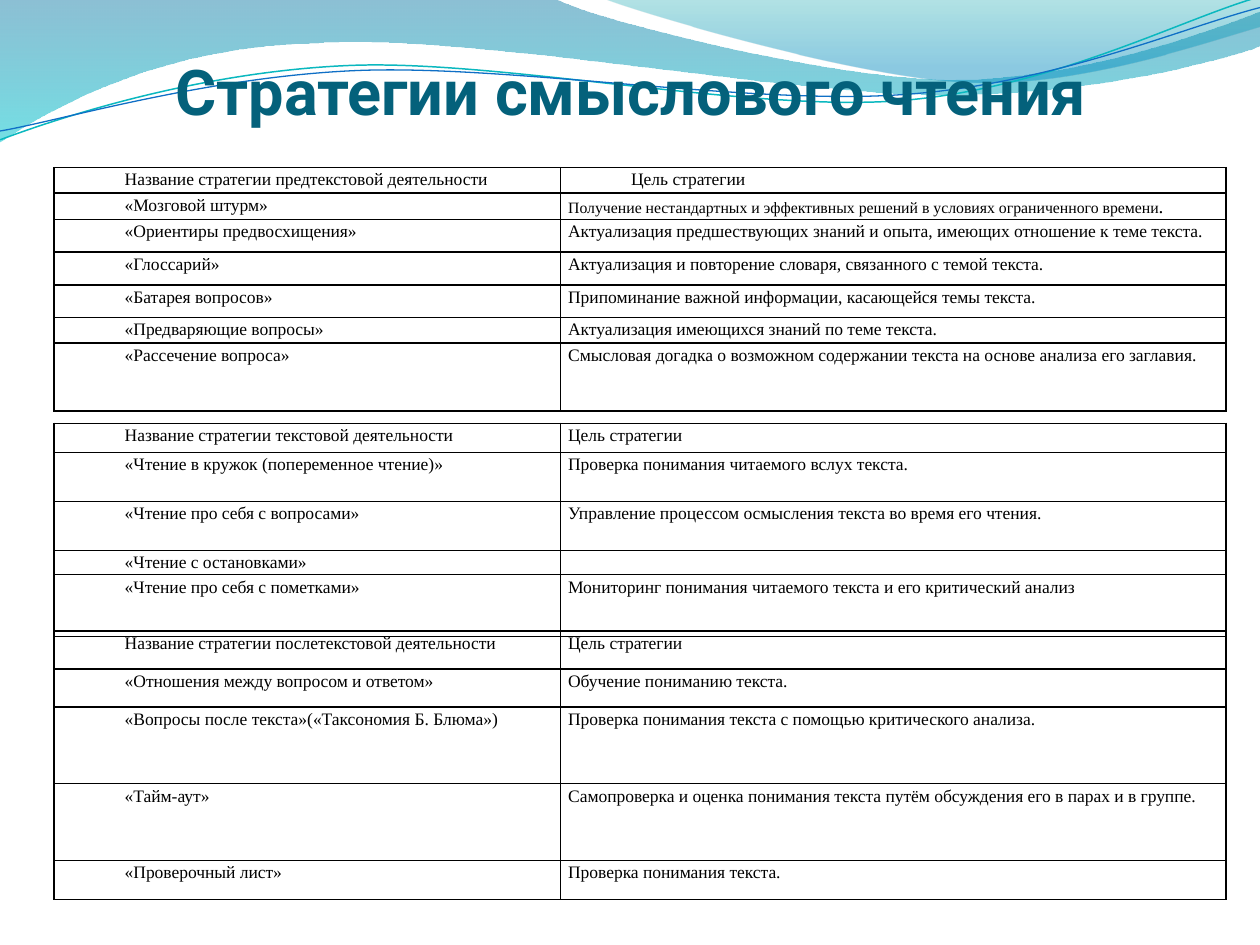
from dataclasses import dataclass
from math import cos, radians, sin
from typing import Optional

from lxml import etree
from pptx import Presentation
from pptx.dml.color import RGBColor
from pptx.enum.text import MSO_ANCHOR, PP_ALIGN
from pptx.oxml.ns import qn
from pptx.util import Inches, Pt

CENTER, JUSTIFY, LEFT = PP_ALIGN.CENTER, PP_ALIGN.JUSTIFY, PP_ALIGN.LEFT
BOTTOM = MSO_ANCHOR.BOTTOM

BLACK = RGBColor(0x00, 0x00, 0x00)
TITLE_TEAL = RGBColor(0x04, 0x61, 0x7B)
DEEP_BLUE = RGBColor(0x00, 0x74, 0xA1)
CYAN = RGBColor(0x00, 0xC6, 0xCF)
TEAL = RGBColor(0x00, 0xA1, 0xA9)
SKY = RGBColor(0x00, 0x8B, 0xBF)
LINE_TEAL = RGBColor(0x0A, 0xB8, 0xBF)
LINE_BLUE = RGBColor(0x0F, 0x6F, 0xC6)

BODY_FONT = "Times New Roman"
TABLE_LEFT, COL_WIDTHS = 0.43, (4.02, 5.28)
LINE_TILT = 357.3
LINE_CENTER = (4.99, 0.58)


@dataclass
class Stop:
    position: float
    color: RGBColor
    opacity: int


@dataclass
class Wave:
    """Steps of two numbers are straight lines, steps of six are cubic curves."""
    start: tuple[float, float]
    steps: list[tuple[float, ...]]
    stops: tuple[Stop, ...] = ()
    line_color: Optional[RGBColor] = None
    line_width: float = 0
    rotation: float = 0


@dataclass
class Row:
    height: float
    name: str
    goal: str


@dataclass
class StrategyTable:
    top: float
    rows: list[Row]
    indent_goal_header: bool = False


WAVES = [
    Wave((0, 0), [
        (4.4, -0.01), (4.76, 0.17, 6.64, 0.63, 7.58, 0.63),
        (8.53, 0.63, 9.58, 0.26, 10, 0.09), (10.01, 0.36),
        (9.83, 0.44, 8.7, 0.76, 7.46, 0.75), (6.22, 0.75, 3.82, 0.28, 2.57, 0.34),
        (1.29, 0.36, 0.46, 0.83, -0.01, 1.13), (0, 0)],
        stops=(Stop(0, DEEP_BLUE, 45), Stop(1, CYAN, 55))),
    Wave((4.79, -0.01), [
        (5.09, 0.11, 6.82, 0.62, 7.69, 0.65), (8.56, 0.69, 9.61, 0.32, 10, 0.21),
        (10, 0), (4.79, -0.01)],
        stops=(Stop(0, TEAL, 30), Stop(0.8, SKY, 45))),
    Wave((0, 1.11), [
        (0.48, 0.93, 1.58, 0.57, 2.77, 0.52), (3.95, 0.47, 5.93, 0.89, 7.13, 0.8),
        (8.33, 0.71, 9.38, 0.15, 9.98, -0.02)],
        line_color=LINE_TEAL, line_width=0.85, rotation=LINE_TILT),
    Wave((0, 1.04), [
        (0.47, 0.96, 1.64, 0.61, 2.83, 0.56), (4.03, 0.51, 5.97, 0.84, 7.17, 0.75),
        (8.36, 0.67, 9.41, 0.21, 10, 0.06)],
        line_color=LINE_BLUE, line_width=0.75, rotation=LINE_TILT),
]

SMALL_GOAL = "Получение нестандартных и эффективных решений в условиях ограниченного времени."

TABLES = [
    StrategyTable(1.33, [
        Row(0.2, "Название стратегии предтекстовой деятельности", "Цель стратегии"),
        Row(0.21, "«Мозговой штурм»", SMALL_GOAL),
        Row(0.26, "«Ориентиры предвосхищения»",
            "Актуализация предшествующих знаний и опыта, имеющих отношение к теме текста."),
        Row(0.26, "«Глоссарий»", "Актуализация и повторение словаря, связанного с темой текста."),
        Row(0.26, "«Батарея вопросов»", "Припоминание важной информации, касающейся темы текста."),
        Row(0.2, "«Предваряющие вопросы»", "Актуализация имеющихся знаний по теме текста."),
        Row(0.54, "«Рассечение вопроса»",
            "Смысловая догадка о возможном содержании текста на основе анализа его заглавия."),
    ], indent_goal_header=True),
    StrategyTable(3.36, [
        Row(0.23, "Название стратегии текстовой деятельности", "Цель стратегии"),
        Row(0.39, "«Чтение в кружок (попеременное чтение)»",
            "Проверка понимания читаемого вслух текста."),
        Row(0.39, "«Чтение про себя с вопросами»",
            "Управление процессом осмысления текста во время его чтения."),
        Row(0.19, "«Чтение с остановками»", ""),
        Row(0.49, "«Чтение про себя с пометками»",
            "Мониторинг понимания читаемого текста и его критический анализ"),
    ]),
    StrategyTable(5.01, [
        Row(0.3, "Название стратегии послетекстовой деятельности", "Цель стратегии"),
        Row(0.3, "«Отношения между вопросом и ответом»", "Обучение пониманию текста."),
        Row(0.61, "«Вопросы после текста»(«Таксономия Б. Блюма»)",
            "Проверка понимания текста с помощью критического анализа."),
        Row(0.61, "«Тайм-аут»",
            "Самопроверка и оценка понимания текста путём обсуждения его в парах и в группе."),
        Row(0.31, "«Проверочный лист»", "Проверка понимания текста."),
    ]),
]


def to_points(step: tuple[float, ...], rotation: float) -> list[tuple[int, int]]:
    """Pair up coordinates and undo the rotation that the shape will get."""
    angle = radians(-rotation)
    cx, cy = LINE_CENTER
    offsets = [(x - cx, y - cy) for x, y in zip(step[::2], step[1::2])]
    return [(Inches(cx + x * cos(angle) - y * sin(angle)),
             Inches(cy + x * sin(angle) + y * cos(angle))) for x, y in offsets]


def bend(sp, segments: list[list[tuple[int, int]]]) -> None:
    """Turn the straight segments that have control points into cubic curves."""
    lines = list(sp._element.iter(qn("a:lnTo")))
    for line, points in zip(lines, segments):
        if len(points) == 1:
            continue
        curve = etree.Element(qn("a:cubicBezTo"))
        for x, y in points:
            etree.SubElement(curve, qn("a:pt"), x=str(x - sp.left), y=str(y - sp.top))
        line.getparent().replace(line, curve)


def add_wave(shapes, wave: Wave) -> None:
    start = to_points(wave.start, wave.rotation)[0]
    segments = [to_points(step, wave.rotation) for step in wave.steps]
    builder = shapes.build_freeform(*start)
    builder.add_line_segments([points[-1] for points in segments], close=bool(wave.stops))
    sp = builder.convert_to_shape()
    bend(sp, segments)
    sp.rotation = wave.rotation
    sp.shadow.inherit = False
    if wave.stops:
        sp.line.fill.background()
        sp.fill.gradient()
        sp.fill.gradient_angle = 270
        for target, stop in zip(sp.fill.gradient_stops, wave.stops):
            target.position = stop.position
            target.color.rgb = stop.color
        for color, stop in zip(sp._element.spPr.iter(qn("a:srgbClr")), wave.stops):
            etree.SubElement(color, qn("a:alpha"), val=str(stop.opacity * 1000))
    else:
        sp.fill.background()
        sp.line.color.rgb = wave.line_color
        sp.line.width = Pt(wave.line_width)


def add_run(p, text: str, size: float, font: str = BODY_FONT,
            color: RGBColor = BLACK, bold: bool = False) -> None:
    r = p.add_run()
    r.text = text
    r.font.size, r.font.name, r.font.bold = Pt(size), font, bold
    r.font.color.rgb = color


def add_title(shapes, text: str) -> None:
    tf = shapes.add_textbox(Inches(0.51), Inches(0.21), Inches(9), Inches(0.81)).text_frame
    tf.word_wrap = True
    tf.vertical_anchor = BOTTOM
    tf.margin_left = tf.margin_right = tf.margin_bottom = 0
    p = tf.paragraphs[0]
    p.alignment = CENTER
    add_run(p, text, 36, "Roboto", TITLE_TEAL, True)


def set_borders(cell) -> None:
    tc_pr = cell._tc.get_or_add_tcPr()
    for i, side in enumerate(("a:lnL", "a:lnR", "a:lnT", "a:lnB")):
        ln = etree.Element(qn(side), w=str(Pt(1)))
        fill = etree.SubElement(ln, qn("a:solidFill"))
        etree.SubElement(fill, qn("a:srgbClr"), val=str(BLACK))
        tc_pr.insert(i, ln)


def fill_cell(cell, text: str, indented: bool) -> None:
    cell.fill.background()
    set_borders(cell)
    cell.margin_left = cell.margin_right = Inches(0.06)
    cell.margin_top = cell.margin_bottom = 0
    p = cell.text_frame.paragraphs[0]
    p.alignment = LEFT if text == SMALL_GOAL else JUSTIFY
    p.line_spacing = 1.15
    if indented:
        p._p.get_or_add_pPr().set("marL", str(Inches(0.5)))
    if text == SMALL_GOAL:
        add_run(p, text[:-1], 9)
        add_run(p, text[-1], 11)
    elif text:
        add_run(p, text, 10)
    else:
        etree.SubElement(p._p, qn("a:endParaRPr"), sz="1000")


def add_strategy_table(shapes, strategy: StrategyTable) -> None:
    height = sum(row.height for row in strategy.rows)
    table = shapes.add_table(len(strategy.rows), len(COL_WIDTHS), Inches(TABLE_LEFT),
                             Inches(strategy.top), Inches(sum(COL_WIDTHS)), Inches(height)).table
    table.first_row = table.horz_banding = False
    for column, width in zip(table.columns, COL_WIDTHS):
        column.width = Inches(width)
    for i, row in enumerate(strategy.rows):
        table.rows[i].height = Inches(row.height)
        fill_cell(table.cell(i, 0), row.name, True)
        fill_cell(table.cell(i, 1), row.goal, i == 0 and strategy.indent_goal_header)


def main() -> None:
    prs = Presentation()
    prs.slide_width, prs.slide_height = Inches(10), Inches(7.5)
    shapes = prs.slides.add_slide(prs.slide_layouts[6]).shapes
    for wave in WAVES:
        add_wave(shapes, wave)
    add_title(shapes, "Стратегии смыслового чтения")
    for strategy in TABLES:
        add_strategy_table(shapes, strategy)
    prs.save("out.pptx")


if __name__ == "__main__":
    main()
